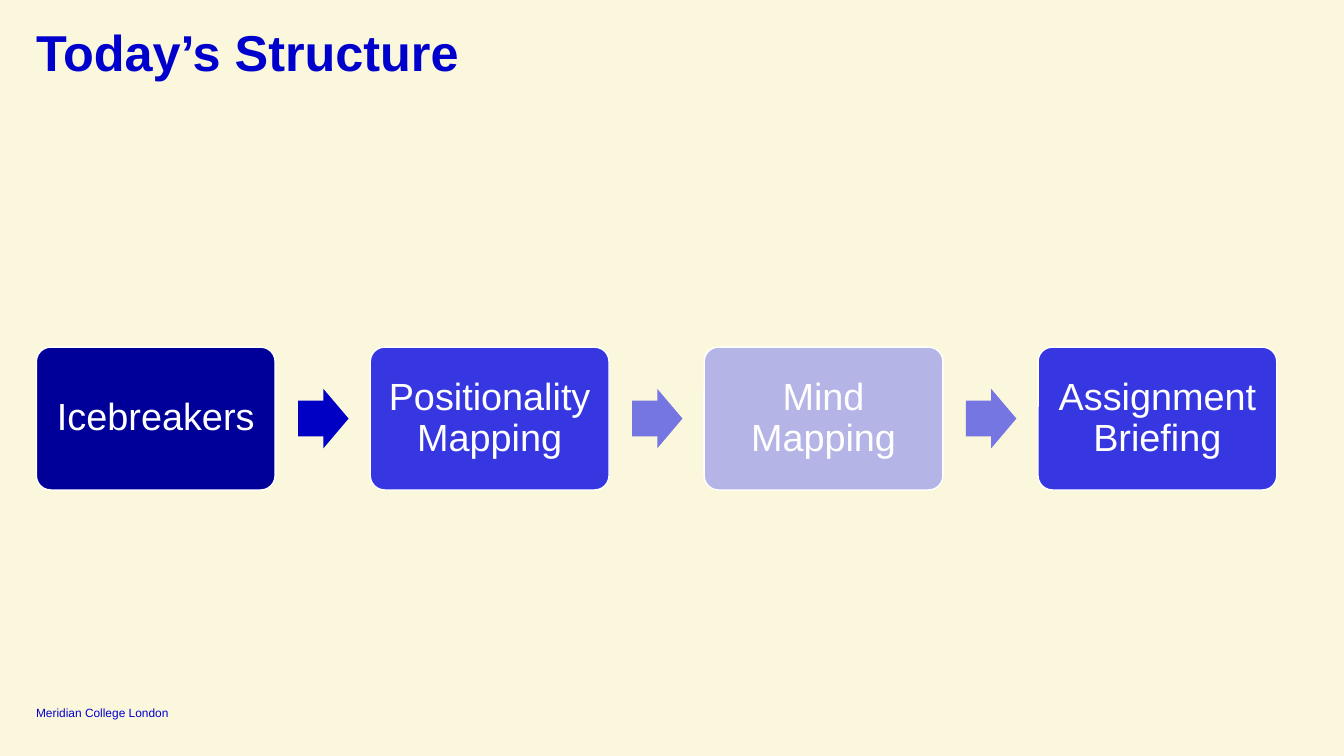
from pptx import Presentation
from pptx.dml.color import RGBColor
from pptx.enum.shapes import MSO_SHAPE
from pptx.enum.text import MSO_ANCHOR, MSO_AUTO_SIZE, PP_ALIGN
from pptx.util import Pt

ROUNDED = MSO_SHAPE.ROUNDED_RECTANGLE
ARROW = MSO_SHAPE.RIGHT_ARROW
TOP, MIDDLE, BOTTOM = MSO_ANCHOR.TOP, MSO_ANCHOR.MIDDLE, MSO_ANCHOR.BOTTOM
LEFT, CENTER = PP_ALIGN.LEFT, PP_ALIGN.CENTER
NO_AUTOFIT = MSO_AUTO_SIZE.NONE

FONT = "Arial"
COLORS = {
    "cream": "FBF7DC",
    "blue": "0000CD",
    "navy": "000098",
    "deep": "0000C4",
    "royal": "3737E2",
    "violet": "7676E3",
    "lilac": "B4B4E6",
    "white": "FFFFFF",
}
STEPS = [
    ("Icebreakers", "navy"),
    ("Positionality Mapping", "royal"),
    ("Mind Mapping", "lilac"),
    ("Assignment Briefing", "royal"),
]
ARROW_COLORS = ["deep", "violet", "violet"]


def color(name):
    """Return the named palette colour."""
    return RGBColor.from_string(COLORS[name])


def write(shape, text, size, ink, anchor, align=LEFT, inset=0, bold=False, spacing=1.0):
    """Set and format the text of a shape."""
    frame = shape.text_frame
    frame.text = text
    frame.word_wrap = True
    frame.auto_size = NO_AUTOFIT
    frame.vertical_anchor = anchor
    frame.margin_left = frame.margin_right = Pt(inset)
    frame.margin_top = frame.margin_bottom = Pt(inset)
    paragraph = frame.paragraphs[0]
    paragraph.alignment = align
    paragraph.line_spacing = spacing
    font = paragraph.runs[0].font
    font.name, font.size, font.bold = FONT, Pt(size), bold
    font.color.rgb = color(ink)


def add_filled(slide, preset, box, fill):
    """Add a flat preset shape in the given box."""
    shape = slide.shapes.add_shape(preset, *map(Pt, box))
    shape.shadow.inherit = False
    shape.fill.solid()
    shape.fill.fore_color.rgb = color(fill)
    shape.line.fill.background()
    return shape


def place_title(slide, left, top, width, height):
    """Move and format the title placeholder."""
    title = slide.shapes.title
    title.left, title.top = Pt(left), Pt(top)
    title.width, title.height = Pt(width), Pt(height)
    write(title, "Today’s Structure", 36, "blue", TOP, bold=True, spacing=0.9)


def add_footer(slide, left, top, width, height):
    """Add the institution name at the foot of the slide."""
    footer = slide.shapes.add_textbox(Pt(left), Pt(top), Pt(width), Pt(height))
    write(footer, "Meridian College London", 8.5, "blue", BOTTOM)


def add_process(slide, left, top, width, height):
    """Spread the steps over the box, with an arrow in each gap."""
    step_width, arrow_width, arrow_height = 170.5, 36, 42.5
    pitch = (width - step_width) / (len(STEPS) - 1)
    for index, (label, fill) in enumerate(STEPS):
        x = left + index * pitch
        step = add_filled(slide, ROUNDED, (x, top, step_width, height), fill)
        step.adjustments[0] = 0.1
        step.line.color.rgb = color("white")
        step.line.width = Pt(1)
        write(step, label, 27, "white", MIDDLE, CENTER, inset=8, spacing=0.9)
    for index, fill in enumerate(ARROW_COLORS):
        x = left + index * pitch + step_width + 16.5
        y = top + (height - arrow_height) / 2
        arrow = add_filled(slide, ARROW, (x, y, arrow_width, arrow_height), fill)
        arrow.adjustments[0] = 0.6
        arrow.adjustments[1] = 0.5


def main():
    """Build and save the slide."""
    deck = Presentation()
    deck.slide_width, deck.slide_height = Pt(960), Pt(540)
    slide = deck.slides.add_slide(deck.slide_layouts[5])
    slide.background.fill.solid()
    slide.background.fill.fore_color.rgb = color("cream")
    place_title(slide, 25.75, 20, 908.5, 29.5)
    add_process(slide, 26, 248, 886, 102)
    add_footer(slide, 25.75, 503.5, 111.5, 10.5)
    deck.save("out.pptx")


if __name__ == "__main__":
    main()
